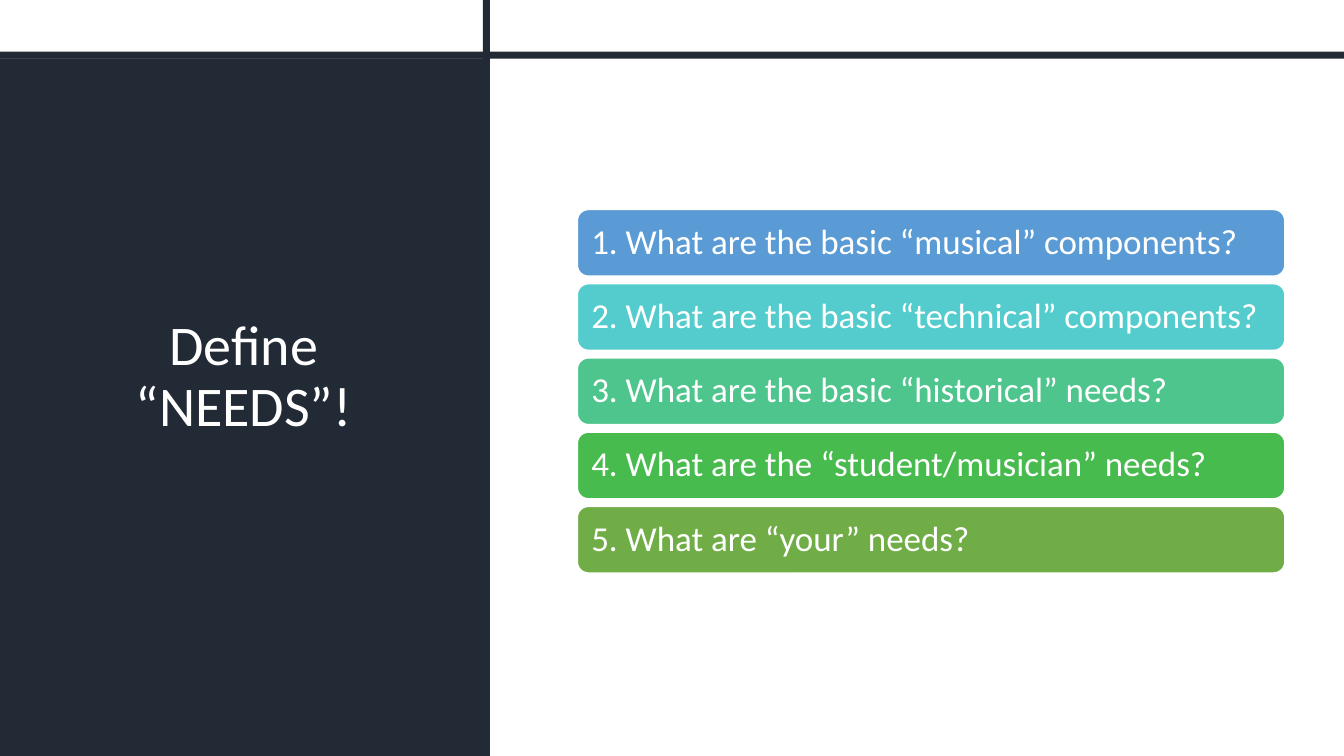
from pptx import Presentation
from pptx import util as u
from pptx.dml.color import RGBColor
from pptx.enum import shapes, text

COLORS = {
    "navy": "222A35",
    "white": "FFFFFF",
    "blue": "5B9BD5",
    "teal": "54CCCD",
    "mint": "4DC58D",
    "green": "48BB4F",
    "olive": "70AD47",
}
QUESTIONS = [
    ("1. What are the basic “musical” components?", "blue"),
    ("2. What are the basic “technical” components?", "teal"),
    ("3. What are the basic “historical” needs?", "mint"),
    ("4. What are the “student/musician” needs?", "green"),
    ("5. What are “your” needs?", "olive"),
]
CARD_TOP, CARD_PITCH = 5.28, 1.87


def add_filled(kind, left, top, width, height, color):
    """Add a shape without outline or shadow; lengths are in centimetres."""
    shape = slide.shapes.add_shape(
        kind, u.Cm(left), u.Cm(top), u.Cm(width), u.Cm(height))
    shape.shadow.inherit = False
    shape.fill.solid()
    shape.fill.fore_color.rgb = RGBColor.from_string(COLORS[color])
    shape.line.fill.background()
    return shape


def write_text(shape, words, size, align):
    frame = shape.text_frame
    frame.word_wrap = True
    frame.auto_size = text.MSO_AUTO_SIZE.NONE
    frame.vertical_anchor = text.MSO_ANCHOR.MIDDLE
    para = frame.paragraphs[0]
    para.alignment = align
    para.line_spacing = 0.9
    span = para.add_run()
    span.text = words
    span.font.name = "Calibri"
    span.font.size = u.Pt(size)
    span.font.color.rgb = RGBColor.from_string(COLORS["white"])


deck = Presentation()
deck.slide_width, deck.slide_height = u.Cm(33.87), u.Cm(19.05)
slide = deck.slides.add_slide(deck.slide_layouts[5])

# Side panel, placed behind the title
rectangle = shapes.MSO_SHAPE.RECTANGLE
panel = add_filled(rectangle, 0, 1.47, 12.34, 17.58, "navy")
title = slide.shapes.title
title._element.addprevious(panel._element)
title.left, title.top = u.Cm(1.68), u.Cm(2.13)
title.width, title.height = u.Cm(8.92), u.Cm(14.78)
write_text(title, "Define “NEEDS”!", 40, text.PP_ALIGN.CENTER)

# Crossing bars
add_filled(rectangle, 12.17, 0, 0.18, 19.05, "navy")
add_filled(rectangle, 0, 1.3, 33.87, 0.18, "navy")

# Question cards
for row, (question, color) in enumerate(QUESTIONS):
    card = add_filled(shapes.MSO_SHAPE.ROUNDED_RECTANGLE, 14.55,
                      CARD_TOP + row * CARD_PITCH, 17.83, 1.68, color)
    card.line.color.rgb = RGBColor.from_string(COLORS["white"])
    card.line.width = u.Pt(1)
    card.text_frame.margin_left = card.text_frame.margin_right = u.Cm(0.27)
    write_text(card, question, 25, text.PP_ALIGN.LEFT)

deck.save("out.pptx")
